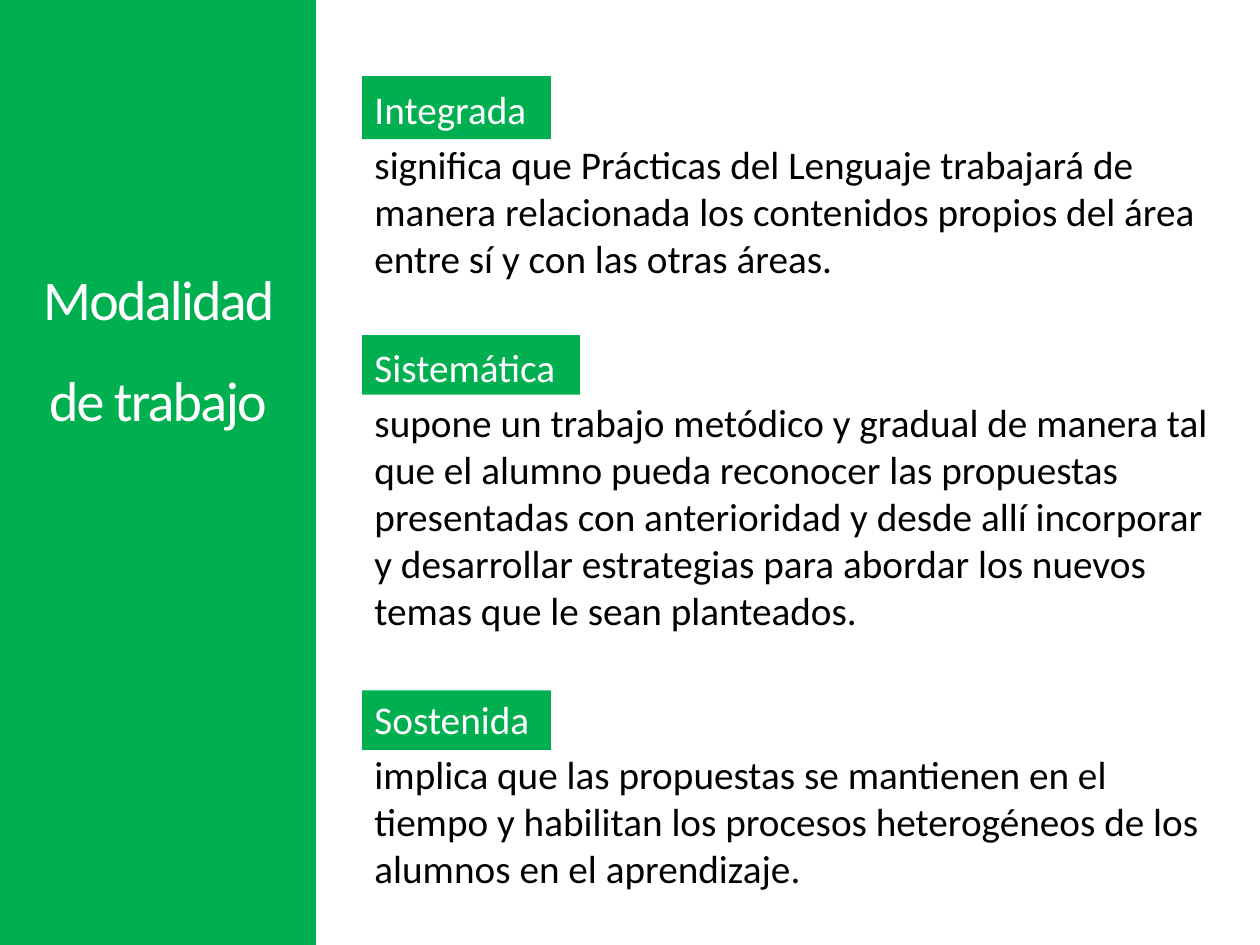
from pptx import Presentation
from pptx import util as u
from pptx.dml.color import RGBColor
from pptx.enum import shapes, text

GREEN = RGBColor(0x00, 0xB0, 0x50)
WHITE = RGBColor(0xFF, 0xFF, 0xFF)
BLACK = RGBColor(0x00, 0x00, 0x00)

SECTIONS = [
    ("Integrada", "significa que Prácticas del Lenguaje trabajará de manera relacionada "
     "los contenidos propios del área entre sí y con las otras áreas."),
    ("Sistemática", "supone un trabajo metódico y gradual de manera tal que el alumno "
     "pueda reconocer las propuestas presentadas con anterioridad y desde allí incorporar "
     "y desarrollar estrategias para abordar los nuevos temas que le sean planteados."),
    ("Sostenida", "implica que las propuestas se mantienen en el tiempo y habilitan "
     "los procesos heterogéneos de los alumnos en el aprendizaje."),
]
LABEL_BARS = [(43.6, 108, 36), (191.5, 124.5, 34), (394.5, 108, 34)]
PANEL_WIDTH = 180.5
CONTENT_LEFT = 206.9


def write(paragraph, content, size=22.4, color=BLACK, font="Calibri", before=0,
          align=text.PP_ALIGN.LEFT, line_spacing=1.0, tracking=0):
    paragraph.alignment = align
    paragraph.space_before = u.Pt(before)
    paragraph.line_spacing = line_spacing
    run = paragraph.add_run()
    run.text = content
    run.font.size = u.Pt(size)
    run.font.name = font
    run.font.color.rgb = color
    if tracking:
        run._r.get_or_add_rPr().set("spc", str(round(tracking * 100)))


class SlideBuilder:
    """Draws the elements of one slide in a shared style."""

    def __init__(self, slide, accent=GREEN):
        self.slide = slide
        self.accent = accent

    def bar(self, left, top, width, height):
        shape = self.slide.shapes.add_shape(
            shapes.MSO_SHAPE.RECTANGLE, u.Pt(left), u.Pt(top), u.Pt(width), u.Pt(height))
        shape.shadow.inherit = False
        shape.fill.solid()
        shape.fill.fore_color.rgb = self.accent
        shape.line.fill.background()

    def text_box(self, left, top, width, height, side_inset=7.2):
        shape = self.slide.shapes.add_textbox(
            u.Pt(left), u.Pt(top), u.Pt(width), u.Pt(height))
        frame = shape.text_frame
        frame.word_wrap = True
        frame.vertical_anchor = text.MSO_ANCHOR.TOP
        frame.margin_left = frame.margin_right = u.Pt(side_inset)
        return frame

    def title(self, content):
        frame = self.text_box(0, 128.5, PANEL_WIDTH, 188.5, side_inset=12)
        write(frame.paragraphs[0], content, size=32, color=WHITE,
              align=text.PP_ALIGN.CENTER, line_spacing=1.5, tracking=-1)

    def sections(self, sections):
        frame = self.text_box(CONTENT_LEFT, 45, 499, 525)
        for index, (heading, body) in enumerate(sections):
            paragraph = frame.add_paragraph() if index else frame.paragraphs[0]
            write(paragraph, heading, color=WHITE, before=35.4 if index else 0)
            write(frame.add_paragraph(), body, before=4.5)


def main():
    presentation = Presentation()
    presentation.slide_width = u.Pt(720)
    presentation.slide_height = u.Pt(540)
    builder = SlideBuilder(presentation.slides.add_slide(presentation.slide_layouts[6]))
    for top, width, height in LABEL_BARS:
        builder.bar(CONTENT_LEFT, top, width, height)
    builder.sections(SECTIONS)
    builder.bar(0, 0, PANEL_WIDTH, 540)
    builder.title("Modalidad de trabajo")
    presentation.save("out.pptx")


if __name__ == "__main__":
    main()
